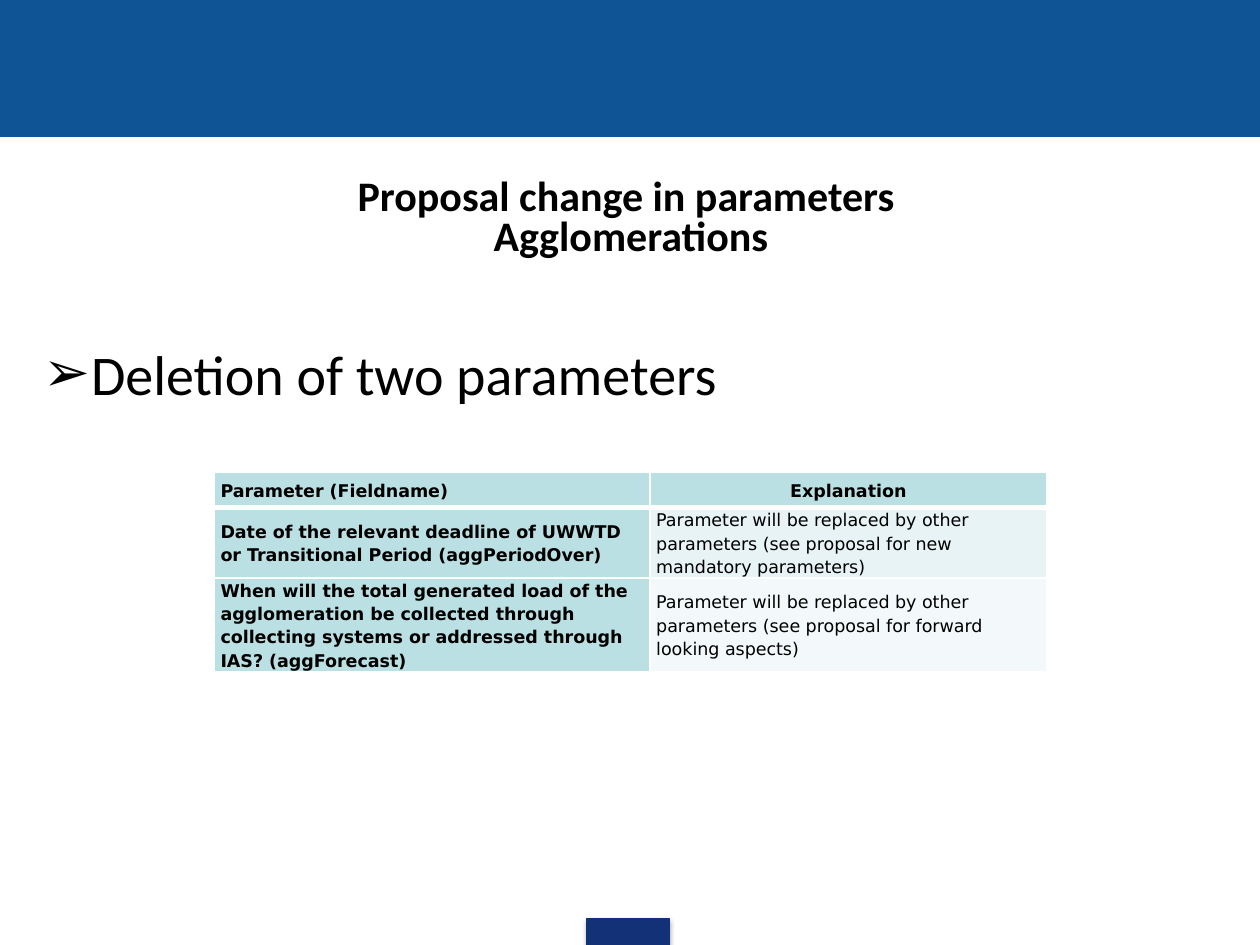
from lxml.etree import SubElement
from pptx import Presentation
from pptx.dml.color import RGBColor
from pptx.enum.shapes import MSO_SHAPE
from pptx.enum.text import MSO_ANCHOR, MSO_AUTO_SIZE, PP_ALIGN
from pptx.oxml import parse_xml
from pptx.oxml.ns import nsdecls, qn
from pptx.util import Pt

HEADER_ROW = ("Parameter (Fieldname)", "Explanation")
BODY_ROWS = (
    ("Date of the relevant deadline of UWWTD or Transitional Period (aggPeriodOver)",
     "Parameter will be replaced by other parameters (see proposal for new mandatory parameters)"),
    ("When will the total generated load of the agglomeration be collected through "
     "collecting systems or addressed through IAS? (aggForecast)",
     "Parameter will be replaced by other parameters (see proposal for forward looking aspects)"),
)
COLUMN_WIDTHS = (249, 226.5)
ROW_HEIGHTS = (20, 40, 53)
EXPLANATION_FILLS = ("BBE0E3", "E7F3F4", "F3F9FA")


def color(hex_string):
    """Turn a hex string into a colour."""
    return RGBColor.from_string(hex_string)


def write_text(frame, lines, size, font="Calibri", bold=False, align=PP_ALIGN.LEFT,
               spacing=1.0, hanging=0, bullet=None):
    """Fill a text frame with one formatted paragraph per line."""
    frame.word_wrap = True
    for index, line in enumerate(lines):
        paragraph = frame.paragraphs[0] if index == 0 else frame.add_paragraph()
        paragraph.text = line
        paragraph.alignment = align
        paragraph.line_spacing = spacing
        paragraph.space_before = paragraph.space_after = Pt(0)
        properties = paragraph._p.get_or_add_pPr()
        properties.set("marL", str(Pt(hanging)))
        properties.set("indent", str(-Pt(hanging)))
        if bullet:
            SubElement(properties, qn("a:buChar")).set("char", bullet)
        else:
            SubElement(properties, qn("a:buNone"))
        paragraph.font.size = Pt(size)
        paragraph.font.name = font
        paragraph.font.bold = bold
        paragraph.font.color.rgb = color("000000")


def place_placeholder(placeholder, left, top, width, height, lines, **text_format):
    """Move a placeholder into its box and write its text."""
    placeholder.left, placeholder.top = Pt(left), Pt(top)
    placeholder.width, placeholder.height = Pt(width), Pt(height)
    frame = placeholder.text_frame
    frame.auto_size = MSO_AUTO_SIZE.NONE
    frame.vertical_anchor = MSO_ANCHOR.TOP
    frame.margin_left = frame.margin_right = Pt(6.5)
    frame.margin_top = frame.margin_bottom = Pt(3)
    write_text(frame, lines, spacing=0.78, **text_format)


def add_bar(slide, left, top, width, height, fill):
    """Add a plain coloured rectangle."""
    bar = slide.shapes.add_shape(MSO_SHAPE.RECTANGLE, Pt(left), Pt(top), Pt(width), Pt(height))
    bar.shadow.inherit = False
    bar.fill.solid()
    bar.fill.fore_color.rgb = color(fill)
    bar.line.color.rgb = color(fill)
    bar.line.width = Pt(0.75)
    return bar


def add_footer_tab(slide, left, top, width, height):
    """Add the small footer block with its soft shadow."""
    tab = add_bar(slide, left, top, width, height, "133176")
    effects = tab._element.spPr.find(qn("a:effectLst"))
    effects.append(parse_xml(
        f'<a:outerShdw {nsdecls("a")} blurRad="{Pt(3.1)}" dist="{Pt(1.8)}" dir="5400000" '
        'rotWithShape="0"><a:srgbClr val="000000"><a:alpha val="35000"/></a:srgbClr></a:outerShdw>'))


def set_borders(cell, **widths):
    """Draw white cell borders of the given widths."""
    for side, width in widths.items():
        cell._tc.get_or_add_tcPr().append(parse_xml(
            f'<a:ln{side} {nsdecls("a")} w="{Pt(width)}"><a:solidFill>'
            f'<a:srgbClr val="FFFFFF"/></a:solidFill></a:ln{side}>'))


def add_parameter_table(slide, left, top):
    """Add the table of deleted parameters."""
    rows = (HEADER_ROW, *BODY_ROWS)
    table = slide.shapes.add_table(len(rows), len(COLUMN_WIDTHS), Pt(left), Pt(top),
                                   Pt(sum(COLUMN_WIDTHS)), Pt(sum(ROW_HEIGHTS))).table
    table.horz_banding = False
    table.first_col = True
    for column, width in zip(table.columns, COLUMN_WIDTHS):
        column.width = Pt(width)
    for row_index, texts in enumerate(rows):
        table.rows[row_index].height = Pt(ROW_HEIGHTS[row_index])
        for column_index, text in enumerate(texts):
            cell = table.cell(row_index, column_index)
            set_borders(cell, L=1, R=1, T=3 if row_index == 1 else 1, B=3 if row_index == 0 else 1)
            cell.fill.solid()
            cell.fill.fore_color.rgb = color(
                EXPLANATION_FILLS[row_index] if column_index else EXPLANATION_FILLS[0])
            cell.vertical_anchor = MSO_ANCHOR.MIDDLE
            cell.margin_left = cell.margin_right = Pt(3.5)
            cell.margin_top = cell.margin_bottom = Pt(0)
            centered = row_index == 0 and column_index == 1
            write_text(cell.text_frame, [text], size=10, font="DejaVu Sans", spacing=1.15,
                       bold=row_index == 0 or column_index == 0,
                       align=PP_ALIGN.CENTER if centered else PP_ALIGN.LEFT)


def main():
    """Build the slide and save it."""
    presentation = Presentation()
    presentation.slide_width, presentation.slide_height = Pt(720), Pt(540)
    slide = presentation.slides.add_slide(presentation.slide_layouts[1])
    add_bar(slide, 0, 0, 720, 78, "0F5494")
    add_footer_tab(slide, 335.5, 525, 47, 15.5)
    place_placeholder(slide.shapes.title, 18.5, 100, 684, 52,
                      ["Proposal change in parameters ", "Agglomerations"],
                      size=24, bold=True, align=PP_ALIGN.CENTER, hanging=19.5)
    place_placeholder(slide.placeholders[1], 18.5, 199, 684, 40,
                      ["Deletion of two parameters"], size=32, hanging=27, bullet="➢")
    add_parameter_table(slide, 122.5, 270)
    presentation.save("out.pptx")


if __name__ == "__main__":
    main()
